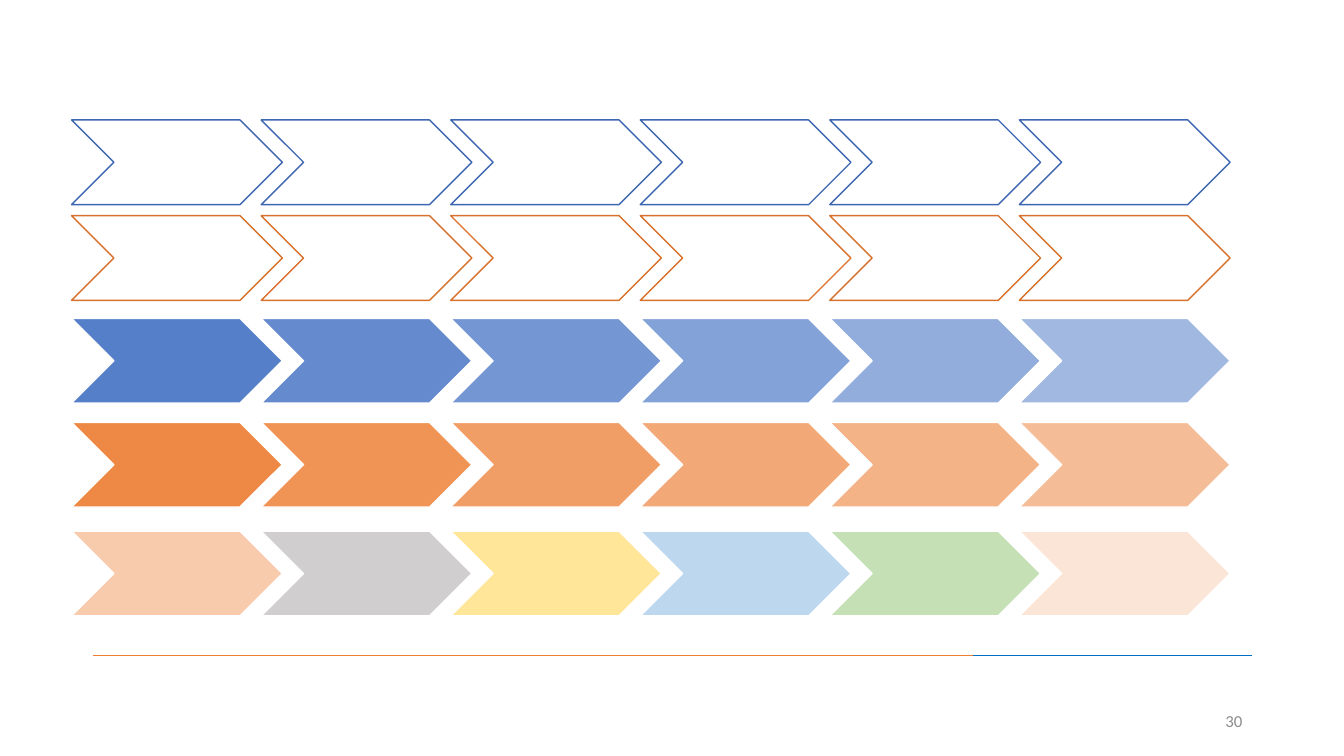
from lxml import etree
from pptx import Presentation
from pptx.dml.color import RGBColor
from pptx.enum.shapes import MSO_CONNECTOR, MSO_SHAPE
from pptx.enum.text import MSO_ANCHOR, PP_ALIGN
from pptx.oxml.ns import qn
from pptx.util import Inches, Pt

CHEVRON = MSO_SHAPE.CHEVRON
STRAIGHT = MSO_CONNECTOR.STRAIGHT
MIDDLE = MSO_ANCHOR.MIDDLE
RIGHT = PP_ALIGN.RIGHT

COLORS = {
    "white": "FFFFFF", "blue": "4472C4", "orange": "ED7D31",
    "blue_edge": "3E67B2", "orange_edge": "D7712C", "rule_blue": "0070C0",
    "page": "8C8C8C", "peach": "F8CBAD", "gray": "D0CECE",
    "yellow": "FFE699", "sky": "BDD7EE", "green": "C5E0B4", "cream": "FBE5D6",
}
STEPS = 6
ROW_LEFT, STEP_PITCH = 0.71, 1.88
STEP_WIDTH, STEP_HEIGHT = 2.09, 0.84
FADE = [90 - 8 * i for i in range(STEPS)]
OPAQUE = [100] * STEPS
PASTELS = ["peach", "gray", "yellow", "sky", "green", "cream"]

# top, fill names, opacity in percent, line name
ROWS = [
    (5.27, PASTELS, OPAQUE, "white"),
    (4.19, ["orange"] * STEPS, FADE, "white"),
    (3.16, ["blue"] * STEPS, FADE, "white"),
    (1.19, ["white"] * STEPS, OPAQUE, "blue_edge"),
    (2.14, ["white"] * STEPS, OPAQUE, "orange_edge"),
]


class SlideBuilder:
    font = "Calibri"
    line_width = Pt(1)

    def __init__(self, slide):
        self.slide = slide

    @staticmethod
    def color(name):
        return RGBColor.from_string(COLORS[name])

    def rule(self, shapes, left, right, y, color):
        """Add a horizontal line without a shadow."""
        line = shapes.add_connector(
            STRAIGHT, Inches(left), Inches(y), Inches(right), Inches(y))
        line.line.color.rgb = self.color(color)
        line.line.width = self.line_width
        etree.SubElement(line._element.spPr, qn("a:effectLst"))

    def chevron(self, shapes, left, top, fill, opacity, edge):
        sp = shapes.add_shape(CHEVRON, Inches(left), Inches(top),
                              Inches(STEP_WIDTH), Inches(STEP_HEIGHT))
        sp.shadow.inherit = False
        sp.fill.solid()
        sp.fill.fore_color.rgb = self.color(fill)
        if opacity < 100:
            clr = sp._element.spPr.find(qn("a:solidFill")).find(qn("a:srgbClr"))
            etree.SubElement(clr, qn("a:alpha"), val=str(opacity * 1000))
        sp.line.color.rgb = self.color(edge)
        sp.line.width = self.line_width

    def chevron_row(self, top, fills, opacities, edge):
        row = self.slide.shapes.add_group_shape()
        for i, (fill, opacity) in enumerate(zip(fills, opacities)):
            self.chevron(row.shapes, ROW_LEFT + i * STEP_PITCH, top,
                         fill, opacity, edge)

    def footer_rule(self):
        group = self.slide.shapes.add_group_shape()
        self.rule(group.shapes, 0.92, 9.66, 6.5, "orange")
        self.rule(group.shapes, 9.65, 12.42, 6.5, "rule_blue")

    def page_number(self, text):
        box = self.slide.shapes.add_textbox(
            Inches(12), Inches(6.95), Inches(0.42), Inches(0.4))
        tf = box.text_frame
        tf.word_wrap = True
        tf.vertical_anchor = MIDDLE
        p = tf.paragraphs[0]
        p.alignment = RIGHT
        r = p.add_run()
        r.text = text
        r.font.name = self.font
        r.font.size = Pt(12)
        r.font.color.rgb = self.color("page")


def main():
    prs = Presentation()
    prs.slide_width, prs.slide_height = Inches(13.33), Inches(7.5)
    s = SlideBuilder(prs.slides.add_slide(prs.slide_layouts[6]))
    s.footer_rule()
    s.page_number("30")
    for row in ROWS:
        s.chevron_row(*row)
    prs.save("out.pptx")


if __name__ == "__main__":
    main()
